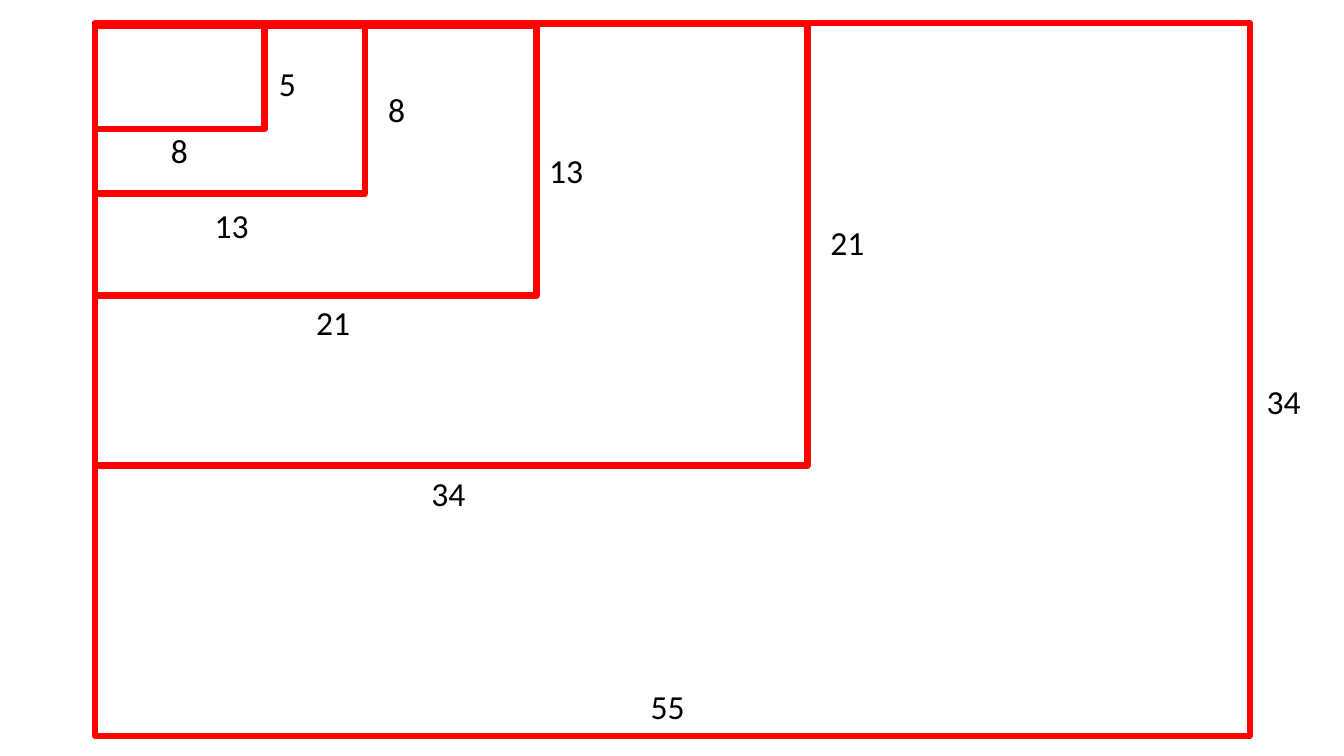
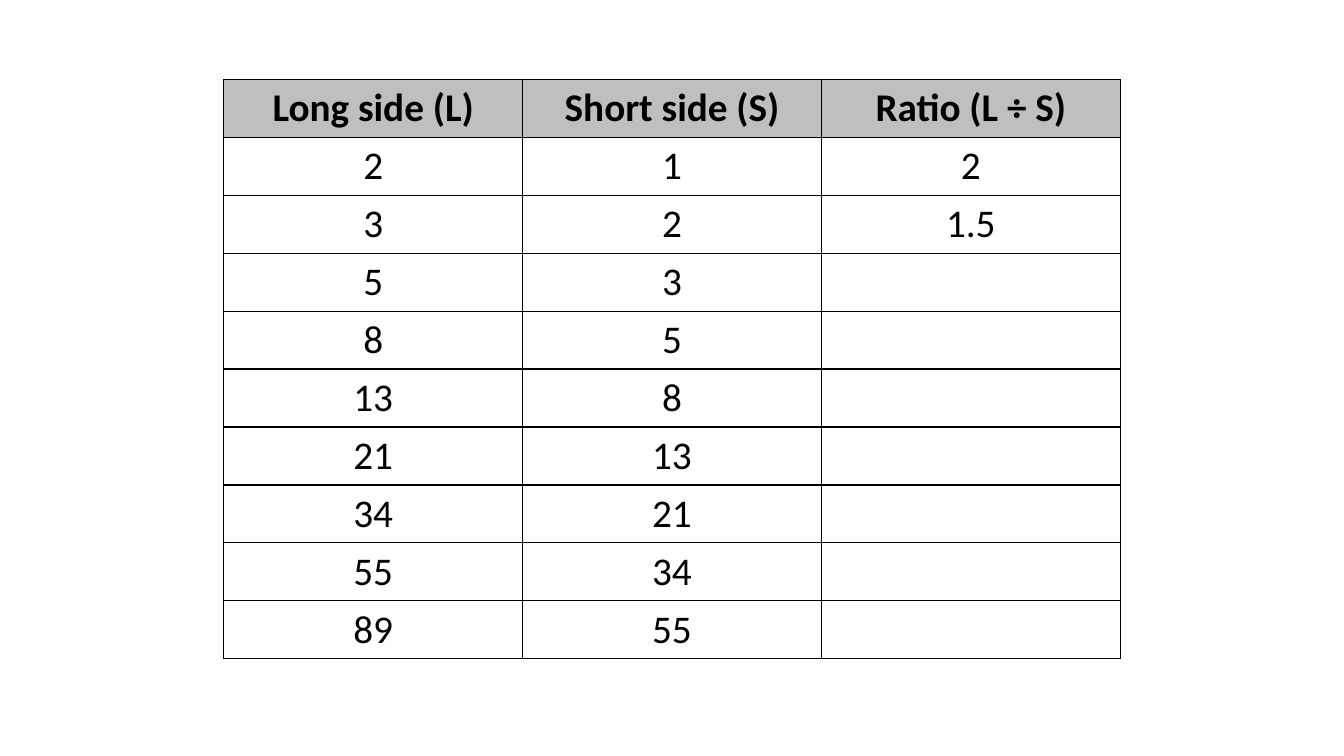
"""Build two slides on Fibonacci rectangles and the ratios of their sides."""
from itertools import pairwise

from lxml.etree import SubElement
from pptx import Presentation
from pptx.dml.color import RGBColor
from pptx.enum.shapes import MSO_SHAPE
from pptx.enum.text import MSO_AUTO_SIZE, PP_ALIGN
from pptx.oxml.ns import qn
from pptx.util import Cm, Pt

COLORS = {"outline": "FF0000", "text": "000000", "header": "BFBFBF", "border": "000000"}
FONT = "Calibri"


def style_text(text_frame, size, bold=False, alignment=PP_ALIGN.LEFT):
    for paragraph in text_frame.paragraphs:
        paragraph.alignment = alignment
        for run in paragraph.runs:
            run.font.name = FONT
            run.font.size = Pt(size)
            run.font.bold = bold
            run.font.color.rgb = RGBColor.from_string(COLORS["text"])


def add_borders(cell):
    properties = cell._tc.get_or_add_tcPr()
    for position, side in enumerate(("lnL", "lnR", "lnT", "lnB")):
        border = properties.makeelement(qn(f"a:{side}"), {"w": str(Pt(1))})
        fill = SubElement(border, qn("a:solidFill"))
        SubElement(fill, qn("a:srgbClr"), val=COLORS["border"])
        properties.insert(position, border)


presentation = Presentation()
presentation.slide_width = Cm(33.87)
presentation.slide_height = Cm(19.05)
blank_layout = presentation.slide_layouts[6]

slide = presentation.slides.add_slide(blank_layout)
side_lengths = {5: 2.62, 8: 4.28, 13: 6.81, 21: 11.13, 34: 17.96, 55: 29.11}
rectangle_left = 2.39
rectangle_tops = [0.64, 0.6, 0.64, 0.6, 0.58]
short_label_places = [(6.78, 1.45), (9.53, 2.11), (13.59, 3.66), (20.68, 5.46), (31.67, 9.47)]
long_label_places = [(4.06, 3.15), (5.16, 5.05), (7.72, 7.49), (10.62, 11.79), (16.15, 17.17)]

for (short, long), top, short_place, long_place in zip(
    pairwise(side_lengths), rectangle_tops, short_label_places, long_label_places
):
    group = slide.shapes.add_group_shape()
    rectangle = group.shapes.add_shape(
        MSO_SHAPE.RECTANGLE, Cm(rectangle_left), Cm(top),
        Cm(side_lengths[long]), Cm(side_lengths[short]),
    )
    rectangle.shadow.inherit = False
    rectangle.fill.background()
    rectangle.line.color.rgb = RGBColor.from_string(COLORS["outline"])
    rectangle.line.width = Pt(4.5)
    for side, (label_left, label_top) in ((short, short_place), (long, long_place)):
        label_width = 1 if side < 10 else 1.52
        label = group.shapes.add_textbox(Cm(label_left), Cm(label_top), Cm(label_width), Cm(1.28))
        label.text_frame.word_wrap = True
        label.text_frame.auto_size = MSO_AUTO_SIZE.SHAPE_TO_FIT_TEXT
        label.text_frame.text = str(side)
        style_text(label.text_frame, 24)

slide = presentation.slides.add_slide(blank_layout)
headers = ["Long side (L)", "Short side (S)", "Ratio (L ÷ S)"]
fibonacci = [1, 2, 3, 5, 8, 13, 21, 34, 55, 89]
ratios = {2: "2", 3: "1.5"}
rows = [headers] + [
    [str(long), str(short), ratios.get(long, "")] for short, long in pairwise(fibonacci)
]
column_width, row_height = 7.53, 1.46
table = slide.shapes.add_table(
    len(rows), len(headers), Cm(5.64), Cm(2),
    Cm(column_width * len(headers)), Cm(row_height * len(rows)),
).table
table.first_row = False
table.horz_banding = False
for column in table.columns:
    column.width = Cm(column_width)
for row_index, values in enumerate(rows):
    is_header = row_index == 0
    table.rows[row_index].height = Cm(row_height)
    for column_index, value in enumerate(values):
        cell = table.cell(row_index, column_index)
        cell.text_frame.text = value
        style_text(cell.text_frame, 28, is_header, PP_ALIGN.CENTER)
        if is_header:
            cell.fill.solid()
            cell.fill.fore_color.rgb = RGBColor.from_string(COLORS["header"])
        else:
            cell.fill.background()
        add_borders(cell)

presentation.save("out.pptx")
